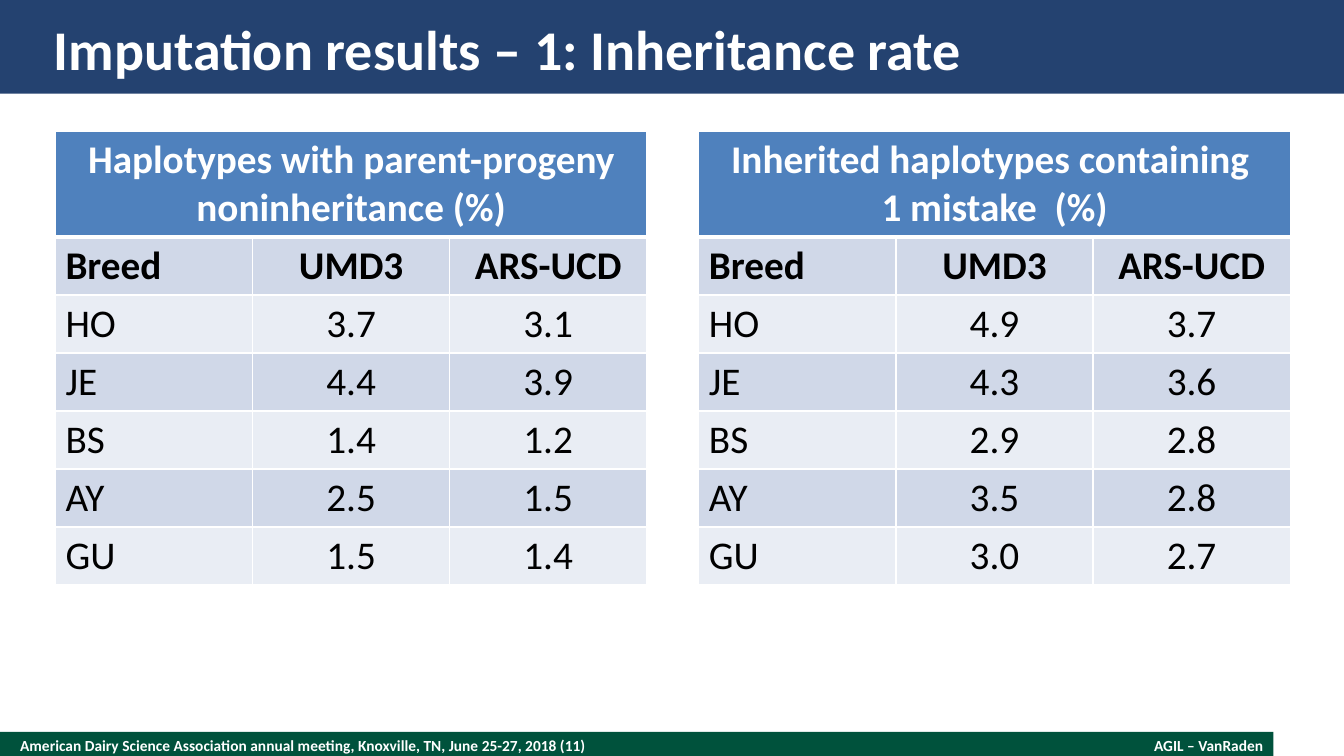
"""Build the slide comparing haplotype inheritance between two genome assemblies."""
from dataclasses import dataclass

from lxml import etree
from pptx import Presentation
from pptx import util as u
from pptx.dml.color import RGBColor
from pptx.enum import shapes, text
from pptx.oxml.ns import qn

WIDTH, HEIGHT = u.Inches(13.33), u.Inches(7.5)


@dataclass(frozen=True)
class Theme:
    """Colours, typeface and type sizes of the slide."""
    font: str = "Calibri"
    white: str = "FFFFFF"
    black: str = "000000"
    navy: str = "244270"
    green: str = "00523C"
    heading: str = "4F81BD"
    bands: tuple[str, str] = ("D0D8E8", "E9EDF4")
    title_size: int = 40
    table_size: int = 28
    footer_size: int = 11


@dataclass(frozen=True)
class Box:
    """Position and size in percent of the slide's width and height."""
    left: float
    top: float
    width: float
    height: float

    def lengths(self) -> tuple[int, int, int, int]:
        """Return left, top, width and height as slide lengths."""
        return (int(WIDTH * self.left / 100), int(HEIGHT * self.top / 100),
                int(WIDTH * self.width / 100), int(HEIGHT * self.height / 100))


@dataclass(frozen=True)
class Bar:
    """A plain coloured band."""
    box: Box
    color: str


@dataclass(frozen=True)
class Label:
    """A line of footer text."""
    box: Box
    words: str
    align: text.PP_ALIGN


@dataclass(frozen=True)
class RateTable:
    """Rates by breed under a heading that spans all columns."""
    left: float
    heading: str
    rates: tuple[tuple[str, str], ...]


THEME = Theme()
TITLE = "Imputation results – 1: Inheritance rate"
TITLE_BOX = Box(4, 1.73, 92, 9.33)
BARS = (Bar(Box(0, 96.8, 94.75, 3.6), THEME.green),
        Bar(Box(0, 0, 100, 12.4), THEME.navy))
LABELS = (
    Label(Box(1.5, 96.8, 65, 3.6),
          "American Dairy Science Association annual meeting, Knoxville, TN, June 25-27, 2018 (11)",
          text.PP_ALIGN.LEFT),
    Label(Box(72, 97.33, 22, 2.53), "AGIL – VanRaden", text.PP_ALIGN.RIGHT),
)
COLUMNS = ("Breed", "UMD3", "ARS-UCD")
BREEDS = ("HO", "JE", "BS", "AY", "GU")
TABLE_TOP, TABLE_WIDTH, HEADING_ROW, BODY_ROW = 17.33, 44, 13.8, 7.65
TABLES = (
    RateTable(4.13, "Haplotypes with parent-progeny noninheritance (%)",
              (("3.7", "3.1"), ("4.4", "3.9"), ("1.4", "1.2"), ("2.5", "1.5"), ("1.5", "1.4"))),
    RateTable(52, "Inherited haplotypes containing \n1 mistake  (%)",
              (("4.9", "3.7"), ("4.3", "3.6"), ("2.9", "2.8"), ("3.5", "2.8"), ("3.0", "2.7"))),
)


def format_text(frame, size: int, color: str, bold: bool, align: text.PP_ALIGN) -> None:
    """Set alignment and font on every paragraph of a text frame."""
    for paragraph in frame.paragraphs:
        paragraph.alignment = align
        font = paragraph.font
        font.name, font.size, font.bold = THEME.font, u.Pt(size), bold
        font.color.rgb = RGBColor.from_string(color)


def fit_frame(frame) -> None:
    """Wrap a text frame, centre it vertically and remove its margins."""
    frame.word_wrap = True
    frame.auto_size = text.MSO_AUTO_SIZE.NONE
    frame.vertical_anchor = text.MSO_ANCHOR.MIDDLE
    frame.margin_left = frame.margin_right = frame.margin_top = frame.margin_bottom = 0


def add_bar(slide, bar: Bar) -> None:
    """Draw a coloured band."""
    shape = slide.shapes.add_shape(shapes.MSO_SHAPE.RECTANGLE, *bar.box.lengths())
    shape.shadow.inherit = False
    shape.fill.solid()
    shape.fill.fore_color.rgb = RGBColor.from_string(bar.color)
    shape.line.fill.background()


def add_label(slide, label: Label) -> None:
    """Draw a footer text."""
    frame = slide.shapes.add_textbox(*label.box.lengths()).text_frame
    fit_frame(frame)
    frame.text = label.words
    format_text(frame, THEME.footer_size, THEME.white, True, label.align)


def place_title(slide) -> None:
    """Fill the title placeholder and bring it in front of the bars."""
    title = slide.shapes.title
    title.left, title.top, title.width, title.height = TITLE_BOX.lengths()
    fit_frame(title.text_frame)
    title.text_frame.text = TITLE
    format_text(title.text_frame, THEME.title_size, THEME.white, True, text.PP_ALIGN.LEFT)
    title.element.getparent().append(title.element)


def add_borders(cell, top: int, bottom: int) -> None:
    """Give a cell white borders, with the top and bottom widths in points."""
    properties = cell._tc.get_or_add_tcPr()
    for side, width in (("lnL", 1), ("lnR", 1), ("lnT", top), ("lnB", bottom)):
        line = etree.SubElement(properties, qn(f"a:{side}"), w=str(u.Pt(width)))
        fill = etree.SubElement(line, qn("a:solidFill"))
        etree.SubElement(fill, qn("a:srgbClr"), val=THEME.white)


def add_rate_table(slide, rate_table: RateTable) -> None:
    """Draw a table of rates by breed."""
    body = [COLUMNS] + [(breed, *rates) for breed, rates in zip(BREEDS, rate_table.rates)]
    rows = [(rate_table.heading, "", "")] + body
    box = Box(rate_table.left, TABLE_TOP, TABLE_WIDTH, HEADING_ROW + BODY_ROW * len(body))
    frame = slide.shapes.add_table(len(rows), len(COLUMNS), *box.lengths())
    table = frame.table
    for row_index, row in enumerate(rows):
        is_heading = row_index == 0
        table.rows[row_index].height = int(HEIGHT * (HEADING_ROW if is_heading else BODY_ROW) / 100)
        fill = THEME.heading if is_heading else THEME.bands[(row_index - 1) % 2]
        for column_index, words in enumerate(row):
            cell = table.cell(row_index, column_index)
            add_borders(cell, 3 if row_index == 1 else 1, 3 if is_heading else 1)
            cell.fill.solid()
            cell.fill.fore_color.rgb = RGBColor.from_string(fill)
            cell.text = words
            is_breed = column_index == 0 and not is_heading
            format_text(cell.text_frame, THEME.table_size,
                        THEME.white if is_heading else THEME.black, row_index < 2,
                        text.PP_ALIGN.LEFT if is_breed else text.PP_ALIGN.CENTER)
    table.cell(0, 0).merge(table.cell(0, len(COLUMNS) - 1))


def main() -> None:
    """Build and save the presentation."""
    presentation = Presentation()
    presentation.slide_width, presentation.slide_height = WIDTH, HEIGHT
    slide = presentation.slides.add_slide(presentation.slide_layouts[5])
    for bar in BARS:
        add_bar(slide, bar)
    for label in LABELS:
        add_label(slide, label)
    place_title(slide)
    for rate_table in TABLES:
        add_rate_table(slide, rate_table)
    presentation.save("out.pptx")


if __name__ == "__main__":
    main()
